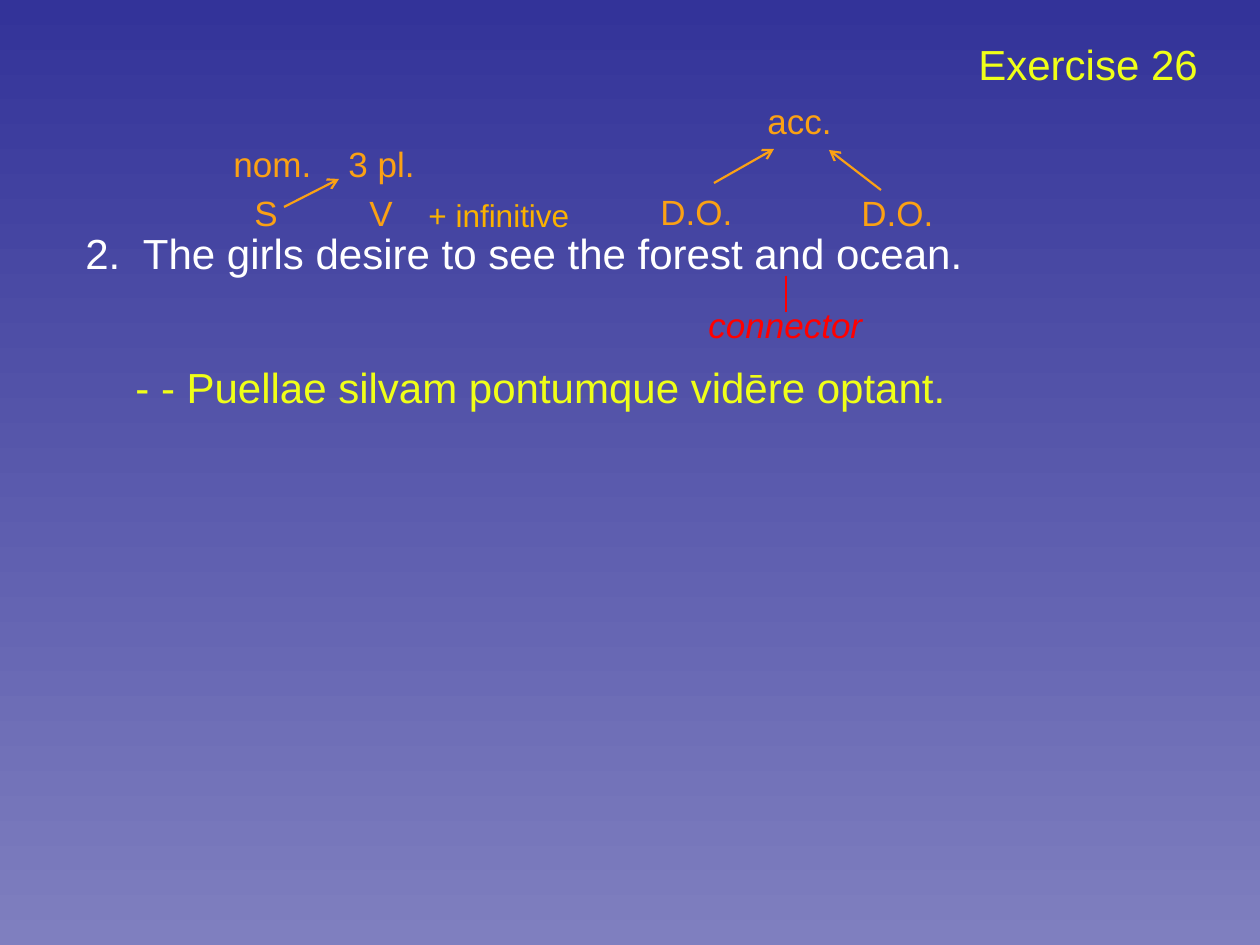
from dataclasses import dataclass

from lxml import etree
from pptx import Presentation
from pptx.dml.color import RGBColor
from pptx.enum.shapes import MSO_CONNECTOR
from pptx.enum.text import MSO_AUTO_SIZE
from pptx.oxml.ns import qn
from pptx.util import Emu, Pt

STRAIGHT = MSO_CONNECTOR.STRAIGHT
FIT_SHAPE = MSO_AUTO_SIZE.SHAPE_TO_FIT_TEXT
PX = 914400 / 126
SLIDE_SIZE = 1260, 945


@dataclass(frozen=True)
class Style:
    size: int
    color: str
    height: int
    italic: bool = False


class Theme:
    font = "Arial"
    background = "333399", "7F7FBF"
    text = {
        "latin": Style(24, "F0FF18", 64),
        "english": Style(24, "FFFFFF", 64),
        "grammar": Style(20, "FBA114", 55),
        "infinitive": Style(18, "FBB200", 50),
        "connector": Style(20, "FF0000", 55, italic=True),
    }
    line_width = {"grammar": 1.25, "connector": 1}


# text, style, left, top, width
TEXTS = [
    ("Exercise 26", "latin", 966, 32, 247),
    ("2.  The girls desire to see the forest and ocean.", "english", 73, 221, 914),
    ("S", "grammar", 242, 185, 49),
    ("V", "grammar", 357, 185, 52),
    ("nom.", "grammar", 221, 136, 105),
    ("3 pl.", "grammar", 336, 136, 92),
    ("D.O.", "grammar", 648, 184, 98),
    ("D.O.", "grammar", 849, 185, 98),
    ("acc.", "grammar", 755, 93, 91),
    ("+ infinitive", "infinitive", 416, 190, 168),
    ("- - Puellae silvam pontumque vidēre optant.", "latin", 123, 355, 843),
    ("connector", "connector", 696, 297, 189),
]

# style, start, end, arrowhead at end
LINES = [
    ("grammar", (284, 207), (339, 179), True),
    ("connector", (786, 276), (786, 312), False),
    ("grammar", (714, 183), (774, 149), True),
    ("grammar", (881, 190), (829, 150), True),
]


def emu(*lengths):
    return [Emu(round(length * PX)) for length in lengths]


def rgb(color):
    return RGBColor.from_string(color)


def paint_background(slide):
    fill = slide.background.fill
    fill.gradient()
    fill.gradient_angle = 270
    for stop, color in zip(fill.gradient_stops, Theme.background):
        stop.color.rgb = rgb(color)


def add_text(slide, text, style_name, left, top, width):
    style = Theme.text[style_name]
    frame = slide.shapes.add_textbox(*emu(left, top, width, style.height)).text_frame
    frame.word_wrap = style_name == "english"
    frame.auto_size = FIT_SHAPE
    paragraph = frame.paragraphs[0]
    paragraph.text = text
    font = paragraph.font
    font.name = Theme.font
    font.size = Pt(style.size)
    font.italic = style.italic
    font.color.rgb = rgb(style.color)


def add_line(slide, style_name, start, end, arrow):
    connector = slide.shapes.add_connector(STRAIGHT, *emu(*start, *end))
    connector.line.color.rgb = rgb(Theme.text[style_name].color)
    connector.line.width = Pt(Theme.line_width[style_name])
    properties = connector.element.spPr
    if arrow:
        etree.SubElement(properties.find(qn("a:ln")), qn("a:tailEnd"), type="arrow")
    etree.SubElement(properties, qn("a:effectLst"))


def main():
    presentation = Presentation()
    presentation.slide_width, presentation.slide_height = emu(*SLIDE_SIZE)
    slide = presentation.slides.add_slide(presentation.slide_layouts[6])
    paint_background(slide)
    for text in TEXTS:
        add_text(slide, *text)
    for line in LINES:
        add_line(slide, *line)
    presentation.save("out.pptx")


if __name__ == "__main__":
    main()
